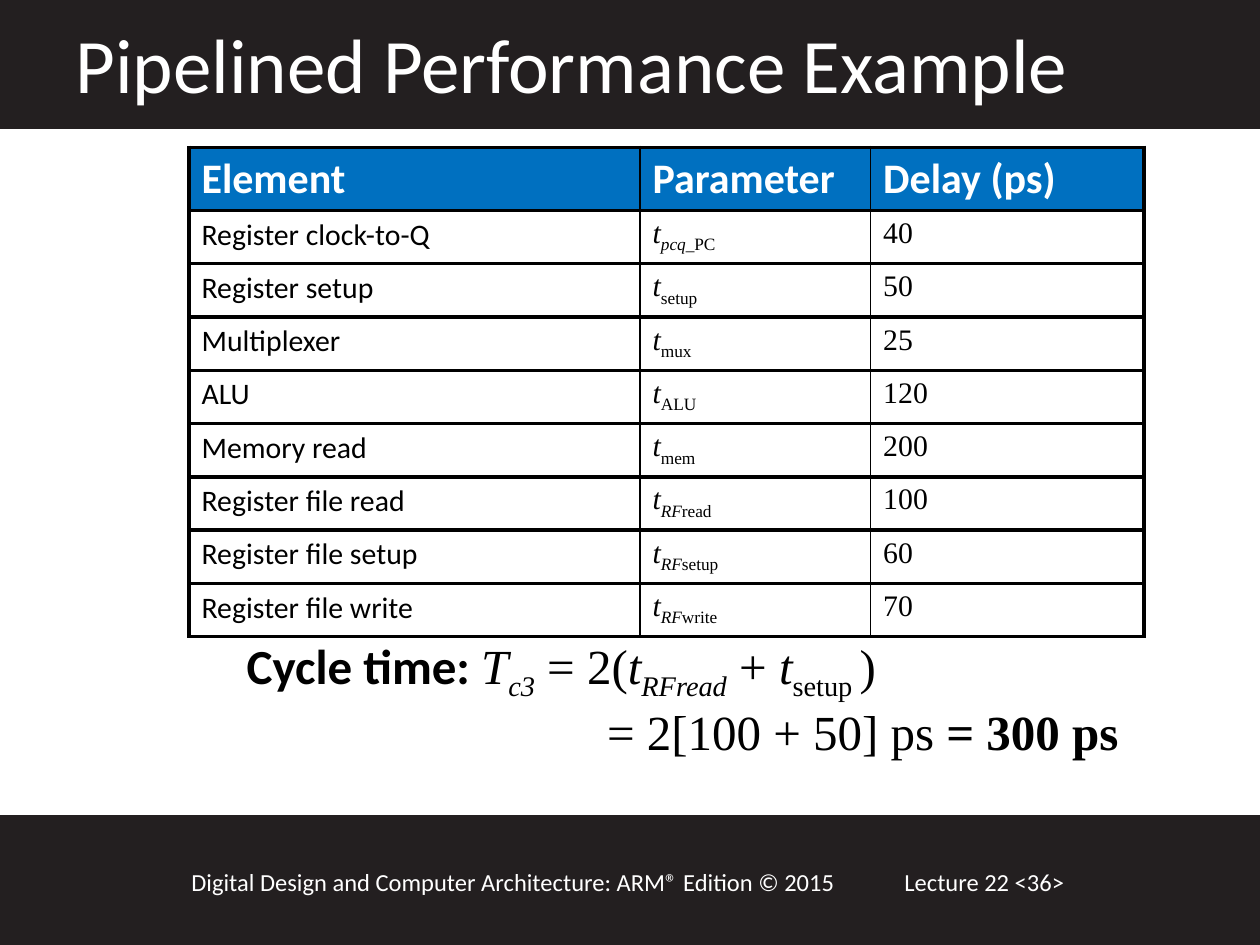
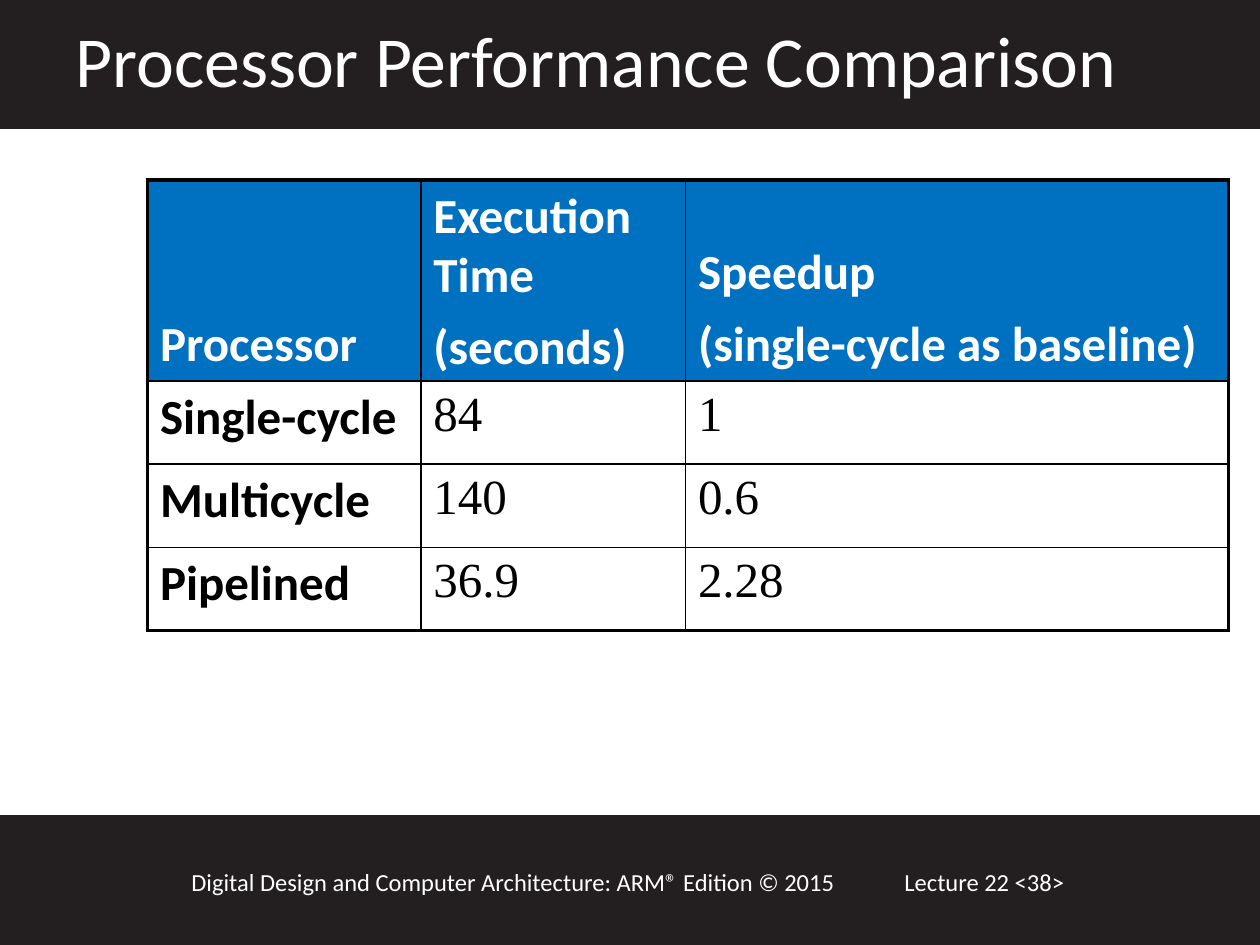
from lxml import etree
from pptx import Presentation
from pptx.dml.color import RGBColor
from pptx.enum.shapes import MSO_SHAPE
from pptx.enum.text import MSO_ANCHOR
from pptx.oxml.ns import qn
from pptx.util import Inches, Pt

RECT = MSO_SHAPE.RECTANGLE
TOP, BOTTOM = MSO_ANCHOR.TOP, MSO_ANCHOR.BOTTOM
DARK, BLUE, WHITE, BLACK = "231F20", "0070C0", "FFFFFF", "000000"
SANS, SERIF = "Calibri", "Times New Roman"
THICK, THIN = 2.25, 1
BOOK = "Digital Design and Computer Architecture: ARM® Edition © 2015"


def rgb(code):
    """Turn a hex string into a colour."""
    return RGBColor.from_string(code)


class Deck:
    """Holds the shared style and the current slide."""

    def __init__(self):
        """Start an empty 10 by 7.5 inch deck."""
        self.prs = Presentation()
        self.prs.slide_width, self.prs.slide_height = Inches(10), Inches(7.5)
        self.shapes = None

    def start(self, title, size, page):
        """Add a slide with its bands, footer and title."""
        blank = self.prs.slide_layouts[6]
        self.shapes = self.prs.slides.add_slide(blank).shapes
        self.band(6.48, 1.02)
        self.band(0, 1.01)
        self.text(7.08, 6.83, 2.17, 0.34, f"Lecture 22 <{page}>", 14)
        self.text(1.42, 6.83, 5.75, 0.34, BOOK, 14)
        self.text(0.5, 0.08, 8.67, 0.84, title, size)

    def band(self, top, height):
        """Draw a dark band across the slide."""
        band = self.shapes.add_shape(RECT, 0, Inches(top), Inches(10), Inches(height))
        band.shadow.inherit = False
        band.fill.solid()
        band.fill.fore_color.rgb = rgb(DARK)
        band.line.color.rgb = rgb(DARK)
        band.line.width = Pt(2)

    def put(self, frame, lines, size, color, base=""):
        """Fill a frame; style letters are b bold, i italic, s subscript, t serif."""
        lines = [lines] if isinstance(lines, str) else lines
        for row, line in enumerate(lines):
            para = frame.add_paragraph() if row else frame.paragraphs[0]
            if row:
                para.space_before = Pt(size * 0.24)
            for words, style in [(line, base)] if isinstance(line, str) else line:
                run = para.add_run()
                run.text = words
                font = run.font
                font.size, font.color.rgb = Pt(size), rgb(color)
                font.name = SERIF if "t" in style else SANS
                font.bold, font.italic = "b" in style, "i" in style
                if "s" in style:
                    run._r.get_or_add_rPr().set("baseline", "-25000")

    def text(self, left, top, width, height, lines, size, color=WHITE):
        """Add a wrapped text box and return its frame."""
        box = self.shapes.add_textbox(*map(Inches, (left, top, width, height)))
        frame = box.text_frame
        frame.word_wrap = True
        self.put(frame, lines, size, color)
        return frame

    def edge(self, cell, widths):
        """Draw the left, right, top and bottom borders of a cell."""
        props = cell._tc.get_or_add_tcPr()
        for spot, (side, width) in enumerate(zip("LRTB", widths)):
            line = etree.Element(qn(f"a:ln{side}"), w=str(Pt(width)))
            fill = etree.SubElement(line, qn("a:solidFill"))
            etree.SubElement(fill, qn("a:srgbClr"), val=BLACK)
            props.insert(spot, line)

    def table(self, left, top, cols, rows, data, sizes, bases, rule, anchor):
        """Add a table with a blue head, heavy frame and ruled rows."""
        spots = map(Inches, (left, top, sum(cols), sum(rows)))
        table = self.shapes.add_table(len(rows), len(cols), *spots).table
        table.first_row = table.horz_banding = False
        for col, width in zip(table.columns, cols):
            col.width = Inches(width)
        for row, height in zip(table.rows, rows):
            row.height = Inches(height)
        for r, line in enumerate(data):
            for c, lines in enumerate(line):
                cell = table.cell(r, c)
                if r:
                    cell.fill.background()
                    self.put(cell.text_frame, lines, sizes[1], BLACK, bases[c])
                else:
                    cell.fill.solid()
                    cell.fill.fore_color.rgb = rgb(BLUE)
                    cell.vertical_anchor = anchor
                    self.put(cell.text_frame, lines, sizes[0], WHITE, "b")
                self.edge(cell, (
                    THIN if c else THICK,
                    THIN if c < len(cols) - 1 else THICK,
                    rule if r else THICK,
                    rule if r < len(rows) - 1 else THICK,
                ))


def delay(name, slant, sub, time):
    """Build one row: element, symbol with subscript, delay."""
    parts = [("t", "ti"), (slant, "tis"), (sub, "ts")]
    return name, [[part for part in parts if part[0]]], time


def example(deck):
    """Build the slide of delays and cycle time."""
    deck.start("Pipelined Performance Example", 44, 36)
    data = [
        ("Element", "Parameter", "Delay (ps)"),
        delay("Register clock-to-Q", "pcq", "_PC", "40"),
        delay("Register setup", "", "setup", "50"),
        delay("Multiplexer", "", "mux", "25"),
        delay("ALU", "", "ALU", "120"),
        delay("Memory read", "", "mem", "200"),
        delay("Register file read", "RF", "read", "100"),
        delay("Register file setup", "RF", "setup", "60"),
        delay("Register file write", "RF", "write", "70"),
    ]
    deck.table(1.5, 1.17, (3.58, 1.83, 2.17), [0.5] + [0.42] * 8, data,
               (24, 17), ("", "", "t"), THICK, TOP)
    cycle = [("Cycle time: ", "b"), ("T", "ti"), ("c3", "tis"), (" = 2(", "t"),
             ("t", "ti"), ("RFread", "tis"), (" + ", "t"), ("t", "ti"),
             ("setup ", "ts"), (")", "t")]
    total = [("= 2[100 + 50] ps ", "t"), ("= 300 ps", "tb")]
    frame = deck.text(1.86, 5, 7.31, 1.17, [cycle, total], 28, BLACK)
    for para in frame.paragraphs:
        para.line_spacing = 0.9
    para._p.get_or_add_pPr().set("marL", str(Inches(2.86)))


def compare(deck):
    """Build the slide that compares the processors."""
    deck.start("Processor Performance Comparison", 41, 38)
    data = [
        ("Processor", ["Execution Time", "(seconds)"],
         ["Speedup", "(single-cycle as baseline)"]),
        ("Single-cycle", "84", "1"),
        ("Multicycle", "140", "0.6"),
        ("Pipelined", "36.9", "2.28"),
    ]
    deck.table(1.17, 1.43, (2.17, 2.1, 4.31), [1.58] + [0.66] * 3, data,
               (28, 28), ("b", "t", "t"), THIN, BOTTOM)


def main():
    """Build and save the deck."""
    deck = Deck()
    example(deck)
    compare(deck)
    deck.prs.save("out.pptx")


if __name__ == "__main__":
    main()
